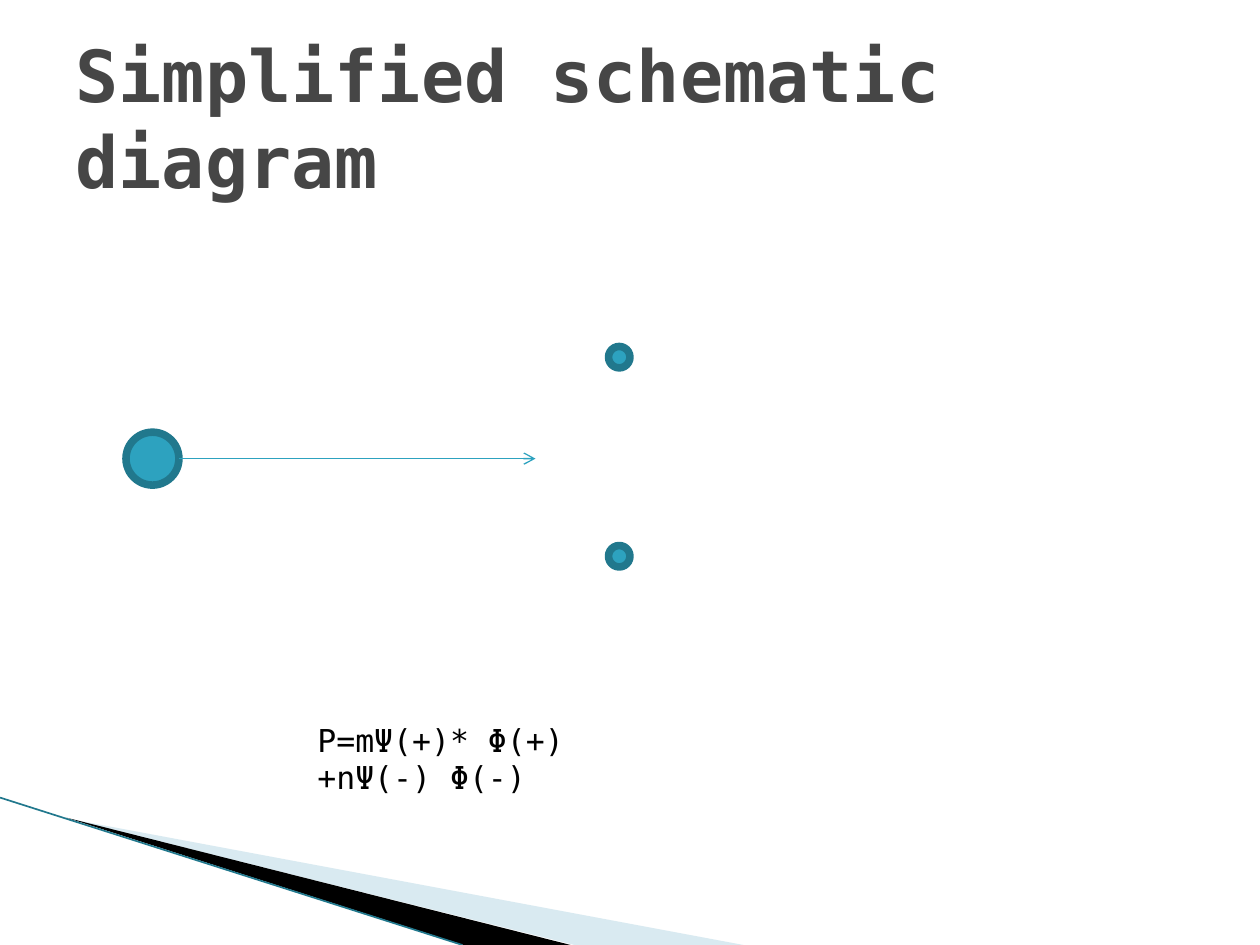
"""Build a slide with a simplified schematic diagram."""
from lxml.etree import SubElement
from pptx import Presentation
from pptx.dml.color import RGBColor
from pptx.enum.shapes import MSO_CONNECTOR, MSO_SHAPE
from pptx.enum.text import MSO_ANCHOR, PP_ALIGN
from pptx.oxml.ns import qn
from pptx.util import Inches, Pt

TITLE = "Simplified schematic diagram"
FORMULA = "P=mΨ(+)* Φ(+)+nΨ(-) Φ(-)"
FONT = "DejaVu Sans Mono"
TEAL, DARK_TEAL = "2DA2BF", "21788D"
WEDGES = [
    ([(0.55, 6.5), (5.9, 7.5), (4.56, 7.5)], "A0CBDC", 40),
    ([(0.53, 6.49), (4.53, 7.5), (3.68, 7.5)], "000000", 100),
]
EDGE = ((0, 6.33), (3.67, 7.5))
SOURCE = (1, 3.43, 0.42)
SLITS = [(4.83, 2.75, 0.17), (4.83, 4.33, 0.17)]
ARROW_END = 4.25


def color(value):
    return RGBColor.from_string(value)


def write(shape, text, size, fill, bold, anchor):
    frame = shape.text_frame
    frame.word_wrap = True
    frame.vertical_anchor = anchor
    paragraph = frame.paragraphs[0]
    paragraph.alignment = PP_ALIGN.LEFT
    run = paragraph.add_run()
    run.text = text
    for name, value in {"name": FONT, "size": Pt(size), "bold": bold}.items():
        setattr(run.font, name, value)
    run.font.color.rgb = color(fill)


def add_wedge(slide, points, fill, opacity):
    corners = [(Inches(x), Inches(y)) for x, y in points]
    builder = slide.shapes.build_freeform(*corners[0])
    builder.add_line_segments(corners[1:], close=True)
    shape = builder.convert_to_shape()
    shape.shadow.inherit = False
    shape.fill.solid()
    shape.fill.fore_color.rgb = color(fill)
    shape.line.fill.background()
    if opacity < 100:
        tint = shape.fill._xPr.find(".//" + qn("a:srgbClr"))
        SubElement(tint, qn("a:alpha"), val=str(opacity * 1000))


def add_line(slide, start, end, stroke, width, arrow=False):
    ends = [Inches(value) for value in (*start, *end)]
    line = slide.shapes.add_connector(MSO_CONNECTOR.STRAIGHT, *ends)
    line.line.color.rgb = color(stroke)
    line.line.width = Pt(width)
    if arrow:
        SubElement(line.line._get_or_add_ln(), qn("a:tailEnd"), type="arrow")
    SubElement(line._element.spPr, qn("a:effectLst"))


def add_circle(slide, left, top, size):
    box = [Inches(value) for value in (left, top, size, size)]
    shape = slide.shapes.add_shape(MSO_SHAPE.FLOWCHART_CONNECTOR, *box)
    shape.shadow.inherit = False
    shape.fill.solid()
    shape.fill.fore_color.rgb = color(TEAL)
    shape.line.color.rgb = color(DARK_TEAL)
    shape.line.width = Pt(4.33)


def main():
    presentation = Presentation()
    presentation.slide_width, presentation.slide_height = Inches(10), Inches(7.5)
    slide = presentation.slides.add_slide(presentation.slide_layouts[5])

    for wedge in WEDGES:
        add_wedge(slide, *wedge)
    add_line(slide, *EDGE, DARK_TEAL, 0.95)

    title = slide.shapes.title
    frame = {"left": 0.5, "top": 0.3, "width": 9, "height": 1.25}
    for name, value in frame.items():
        setattr(title, name, Inches(value))
    write(title, TITLE, 41, "464646", True, MSO_ANCHOR.MIDDLE)

    for circle in [SOURCE, *SLITS]:
        add_circle(slide, *circle)
    left, top, size = SOURCE
    middle = top + size / 2
    add_line(slide, (left + size, middle), (ARROW_END, middle), TEAL, 0.75, arrow=True)

    formula = slide.shapes.add_textbox(*map(Inches, (2.42, 5.67, 2.95, 0.4)))
    write(formula, FORMULA, 18, "000000", False, MSO_ANCHOR.TOP)
    presentation.save("out.pptx")


if __name__ == "__main__":
    main()
